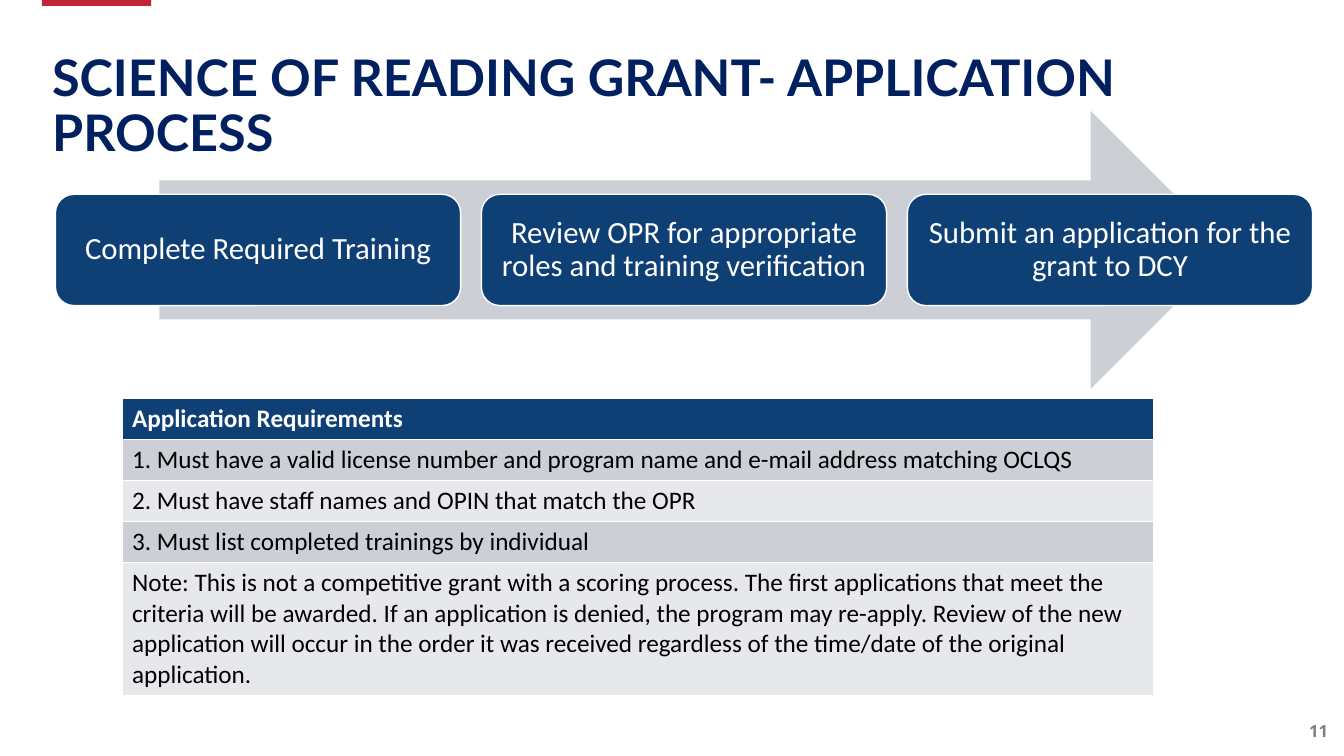
from pptx import Presentation
from pptx.dml.color import RGBColor
from pptx.enum.shapes import MSO_SHAPE
from pptx.enum.text import MSO_ANCHOR, PP_ALIGN
from pptx.util import Pt

WHITE = RGBColor(0xFF, 0xFF, 0xFF)
BLACK = RGBColor(0, 0, 0)
RED = RGBColor(0xC1, 0x26, 0x37)
NAVY = RGBColor(0x00, 0x20, 0x60)
BLUE = RGBColor(0x0E, 0x3F, 0x75)
GREY = RGBColor(0x80, 0x80, 0x80)
MIST = RGBColor(0xCC, 0xCF, 0xD6)
PALE = RGBColor(0xE7, 0xE8, 0xEC)

STEPS = [
    "Complete Required Training",
    "Review OPR for appropriate roles and training verification",
    "Submit an application for the grant to DCY",
]
RULES = [
    "Application Requirements",
    "1. Must have a valid license number and program name and e-mail "
    "address matching OCLQS",
    "2. Must have staff names and OPIN that match the OPR",
    "3. Must list completed trainings by individual",
    "Note: This is not a competitive grant with a scoring process. The first "
    "applications that meet the criteria will be awarded. If an application "
    "is denied, the program may re-apply. Review of the new application will "
    "occur in the order it was received regardless of the time/date of the "
    "original application.",
]


def style(par, face, size, color, bold=False):
    font = par.font
    font.name, font.size, font.bold = face, Pt(size), bold
    font.color.rgb = color


def add_block(slide, kind, left, top, width, height, fill):
    """Add a flat, borderless preset shape."""
    block = slide.shapes.add_shape(kind, Pt(left), Pt(top), Pt(width), Pt(height))
    block.shadow.inherit = False
    block.fill.solid()
    block.fill.fore_color.rgb = fill
    block.line.fill.background()
    return block


def add_title(slide, text, left, top, width, height):
    title = slide.shapes.title
    title.left, title.top = Pt(left), Pt(top)
    title.width, title.height = Pt(width), Pt(height)
    frame = title.text_frame
    frame.text = text
    frame.word_wrap = True
    frame.vertical_anchor = MSO_ANCHOR.TOP
    par = frame.paragraphs[0]
    par.alignment = PP_ALIGN.LEFT
    par.line_spacing = 0.9
    style(par, "Lato", 36, NAVY, True)


def add_number(slide, text, left, top, size):
    box = slide.shapes.add_textbox(Pt(left), Pt(top), Pt(size), Pt(size))
    frame = box.text_frame
    frame.text = text
    frame.word_wrap = True
    frame.vertical_anchor = MSO_ANCHOR.MIDDLE
    par = frame.paragraphs[0]
    par.alignment = PP_ALIGN.CENTER
    style(par, "Open Sans", 12, GREY, True)


def add_steps(slide, left, top, width, height):
    """Lay the steps in a row across a wide arrow."""
    inset = 74.2
    add_block(slide, MSO_SHAPE.RIGHT_ARROW, left + inset, top,
              width - 2 * inset + 15, height, MIST)
    gap = 14.8
    wide = (width - gap * (len(STEPS) - 1)) / len(STEPS)
    tall = height * 0.4
    for i, text in enumerate(STEPS):
        card = add_block(slide, MSO_SHAPE.ROUNDED_RECTANGLE,
                         left + i * (wide + gap), top + (height - tall) / 2,
                         wide, tall, BLUE)
        card.line.color.rgb = WHITE
        card.line.width = Pt(1)
        frame = card.text_frame
        frame.text = text
        frame.word_wrap = True
        frame.vertical_anchor = MSO_ANCHOR.MIDDLE
        frame.margin_left = frame.margin_right = Pt(6.5)
        par = frame.paragraphs[0]
        par.alignment = PP_ALIGN.CENTER
        par.line_spacing = 0.9
        style(par, "Calibri", 22, WHITE)


def add_rules(slide, left, top, width, row):
    """Fill a one-column table whose last row holds the longer note."""
    count = len(RULES)
    note = 95
    shape = slide.shapes.add_table(count, 1, Pt(left), Pt(top), Pt(width),
                                   Pt(row * (count - 1) + note))
    table = shape.table
    for i, text in enumerate(RULES):
        head = i == 0
        table.rows[i].height = Pt(note if i == count - 1 else row)
        cell = table.cell(i, 0)
        cell.text = text
        cell.fill.solid()
        cell.fill.fore_color.rgb = BLUE if head else MIST if i % 2 else PALE
        style(cell.text_frame.paragraphs[0], "Calibri", 18,
              WHITE if head else BLACK, head)


def main():
    deck = Presentation()
    deck.slide_width, deck.slide_height = Pt(960), Pt(540)
    slide = deck.slides.add_slide(deck.slide_layouts[5])
    add_block(slide, MSO_SHAPE.RECTANGLE, 30, -3, 78, 7.2, RED)
    add_number(slide, "11", 924, 504, 36)
    add_title(slide, "SCIENCE OF READING GRANT- APPLICATION PROCESS",
              30, 34.5, 900, 77)
    add_steps(slide, 39.6, 79.2, 898, 198.7)
    add_rules(slide, 87.1, 284.6, 736.6, 29.3)
    deck.save("out.pptx")


if __name__ == "__main__":
    main()
